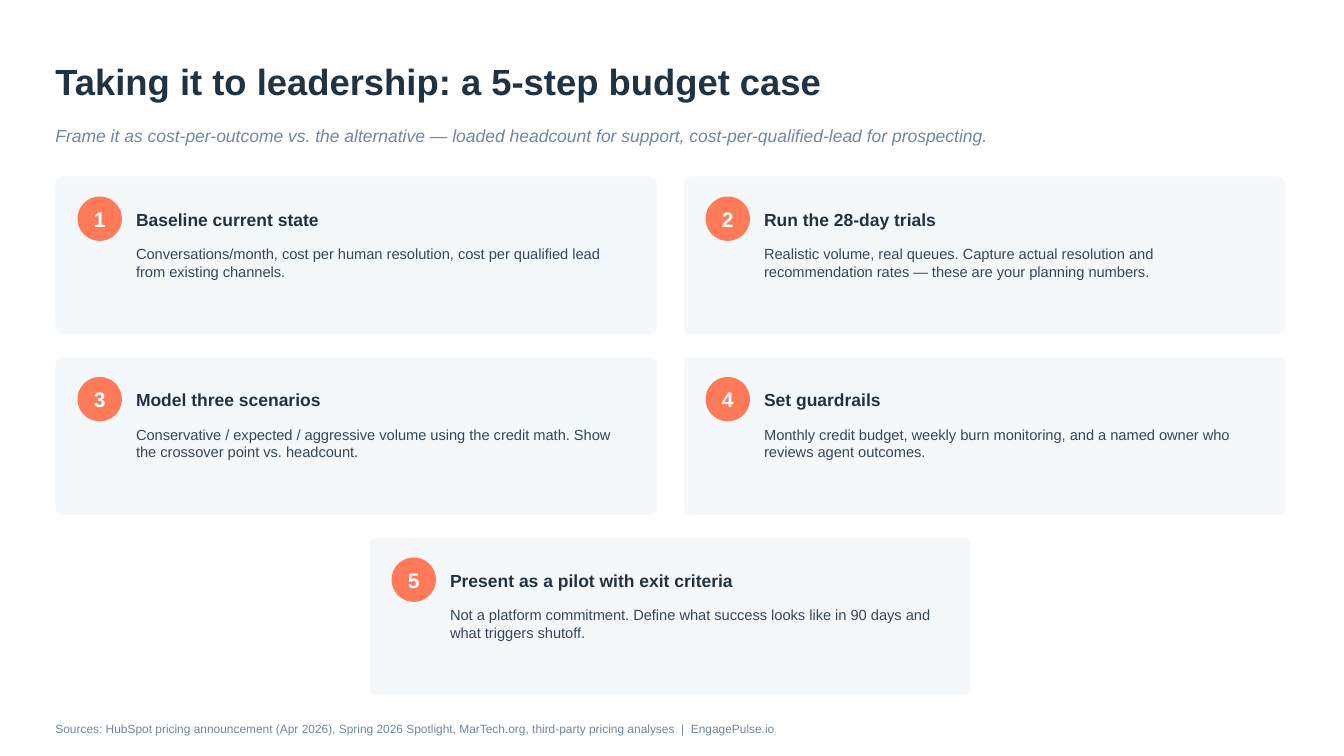
from pptx import Presentation
from pptx.dml.color import RGBColor
from pptx.enum.shapes import MSO_SHAPE
from pptx.enum.text import MSO_ANCHOR, PP_ALIGN
from pptx.util import Pt

ROUNDED = MSO_SHAPE.ROUNDED_RECTANGLE
OVAL = MSO_SHAPE.OVAL
TOP, MIDDLE = MSO_ANCHOR.TOP, MSO_ANCHOR.MIDDLE
LEFT, CENTER = PP_ALIGN.LEFT, PP_ALIGN.CENTER

NAVY = RGBColor(0x21, 0x33, 0x43)
SLATE = RGBColor(0x33, 0x47, 0x5B)
MUTED = RGBColor(0x71, 0x86, 0xA0)
CORAL = RGBColor(0xFF, 0x7A, 0x59)
PALE = RGBColor(0xF5, 0xF8, 0xFA)
WHITE = RGBColor(0xFF, 0xFF, 0xFF)
FONT = "Arial"

# Layout in points
MARGIN = 39.6
CONTENT_WIDTH = 878.4
CARDS_TOP = 126
CARD_WIDTH, CARD_HEIGHT = 429.8, 113
COLUMN_STEP, ROW_STEP = 448.6, 128.9
BADGE_SIZE = 31.7

# Column, row, heading and body; column 0.5 is centred between the two
STEPS = [
    (0, 0, "Baseline current state",
     "Conversations/month, cost per human resolution, cost per qualified lead "
     "from existing channels."),
    (1, 0, "Run the 28-day trials",
     "Realistic volume, real queues. Capture actual resolution and "
     "recommendation rates — these are your planning numbers."),
    (0, 1, "Model three scenarios",
     "Conservative / expected / aggressive volume using the credit math. "
     "Show the crossover point vs. headcount."),
    (1, 1, "Set guardrails",
     "Monthly credit budget, weekly burn monitoring, and a named owner who "
     "reviews agent outcomes."),
    (0.5, 2, "Present as a pilot with exit criteria",
     "Not a platform commitment. Define what success looks like in 90 days "
     "and what triggers shutoff."),
]


def write_text(shape, text, size, color, bold=False, italic=False,
               anchor=MIDDLE, align=LEFT):
    frame = shape.text_frame
    frame.word_wrap = True
    frame.margin_left = frame.margin_right = 0
    frame.margin_top = frame.margin_bottom = 0
    frame.vertical_anchor = anchor
    paragraph = frame.paragraphs[0]
    paragraph.alignment = align
    run = paragraph.add_run()
    run.text = text
    font = run.font
    font.name, font.size, font.bold, font.italic = FONT, Pt(size), bold, italic
    font.color.rgb = color


def add_text(slide, left, top, width, height, text, size, color, **style):
    box = slide.shapes.add_textbox(Pt(left), Pt(top), Pt(width), Pt(height))
    write_text(box, text, size, color, **style)


def add_filled_shape(slide, kind, left, top, width, height, color):
    shape = slide.shapes.add_shape(kind, Pt(left), Pt(top), Pt(width), Pt(height))
    shape.shadow.inherit = False
    shape.fill.solid()
    shape.fill.fore_color.rgb = color
    shape.line.fill.background()
    return shape


def add_step_card(slide, number, left, top, heading, body):
    card = add_filled_shape(slide, ROUNDED, left, top, CARD_WIDTH, CARD_HEIGHT, PALE)
    card.adjustments[0] = 0.05
    badge = add_filled_shape(slide, OVAL, left + 15.8, top + 14.4,
                             BADGE_SIZE, BADGE_SIZE, CORAL)
    write_text(badge, str(number), 15, WHITE, bold=True, align=CENTER)
    add_text(slide, left + 57.6, top + 14.4, 357.8, 32.4, heading, 12.5, NAVY, bold=True)
    add_text(slide, left + 57.6, top + 49, 354.2, 51.8, body, 10.5, SLATE, anchor=TOP)


def main():
    presentation = Presentation()
    presentation.slide_width, presentation.slide_height = Pt(960), Pt(540)
    slide = presentation.slides.add_slide(presentation.slide_layouts[6])

    # Title and subtitle
    add_text(slide, MARGIN, 36, CONTENT_WIDTH, 43.2,
             "Taking it to leadership: a 5-step budget case", 26, NAVY, bold=True)
    add_text(slide, MARGIN, 80.6, CONTENT_WIDTH, 32.4,
             "Frame it as cost-per-outcome vs. the alternative — loaded headcount "
             "for support, cost-per-qualified-lead for prospecting.",
             12.5, MUTED, italic=True)

    # Numbered step cards
    for number, (column, row, heading, body) in enumerate(STEPS, start=1):
        add_step_card(slide, number, MARGIN + column * COLUMN_STEP,
                      CARDS_TOP + row * ROW_STEP, heading, body)

    # Sources
    add_text(slide, MARGIN, 509.8, CONTENT_WIDTH, 21.6,
             "Sources: HubSpot pricing announcement (Apr 2026), Spring 2026 Spotlight, "
             "MarTech.org, third-party pricing analyses  |  EngagePulse.io", 8.5, MUTED)

    presentation.save("out.pptx")


if __name__ == "__main__":
    main()
